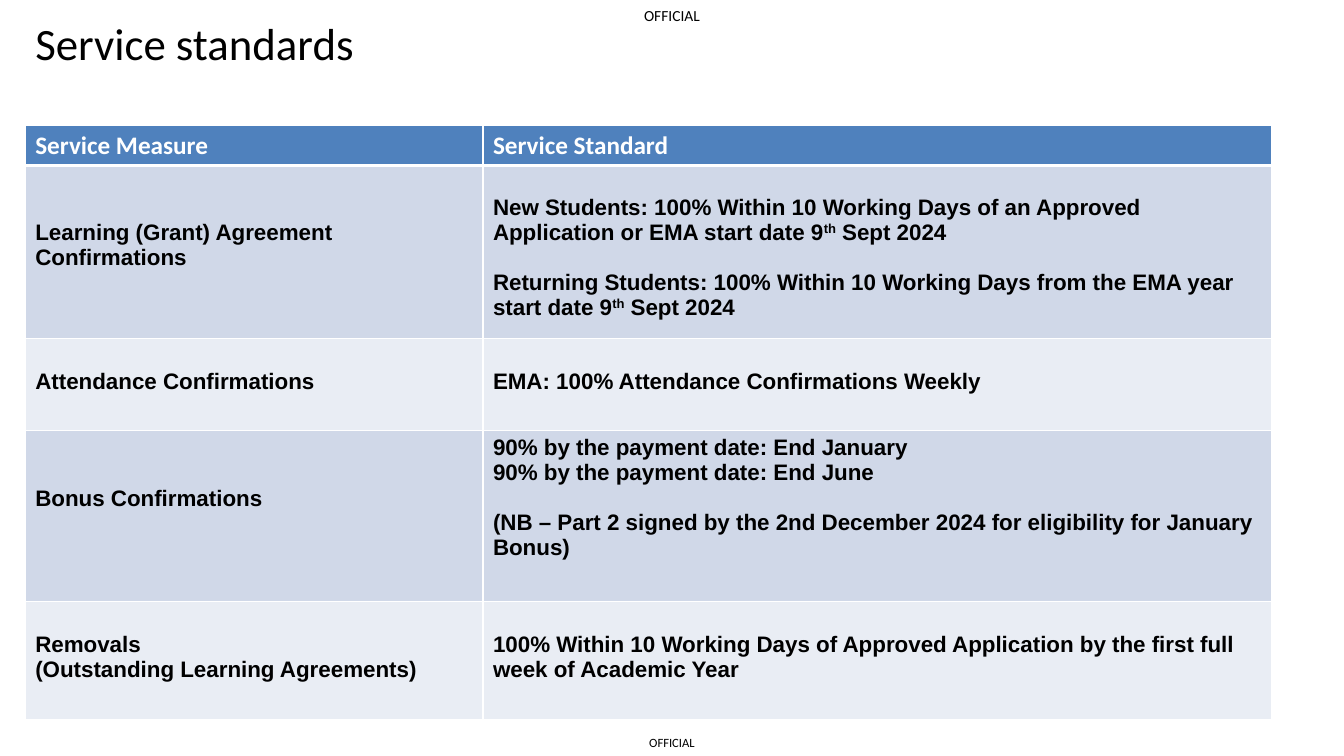
from lxml import etree
from pptx import Presentation
from pptx.dml.color import RGBColor
from pptx.enum.text import MSO_ANCHOR, MSO_AUTO_SIZE, PP_ALIGN
from pptx.oxml.ns import qn
from pptx.util import Inches, Pt

LEFT, CENTER = PP_ALIGN.LEFT, PP_ALIGN.CENTER
TOP, MIDDLE = MSO_ANCHOR.TOP, MSO_ANCHOR.MIDDLE
FIXED = MSO_AUTO_SIZE.NONE
COLORS = {"text": "000000", "head": "4F81BD", "white": "FFFFFF",
          "dark": "D0D8E8", "light": "E9EDF4"}
HEAD = {"name": "Calibri", "size": Pt(18), "bold": True}
BODY = {"name": "Arial", "size": Pt(16), "bold": True}
PAD, LINE, GAP = 0.05, 0.25, Pt(18)
WIDTHS = [4.54, 7.82]
HEIGHTS = [0.39, 1.72, 0.91, 1.7, 1.17]
ROWS = [
    [(0, ["Service Measure"]), (0, ["Service Standard"])],
    [(2, ["Learning (Grant) Agreement Confirmations"]),
     (1, ["New Students: 100% Within 10 Working Days of an Approved "
          "Application or EMA start date 9^th^ Sept 2024",
          "+Returning Students: 100% Within 10 Working Days from the EMA "
          "year start date 9^th^ Sept 2024"])],
    [(1, ["Attendance Confirmations"]),
     (1, ["EMA: 100% Attendance Confirmations Weekly"])],
    [(2, ["Bonus Confirmations"]),
     (0, ["90% by the payment date: End January",
          "90% by the payment date: End June",
          "+(NB – Part 2 signed by the 2nd December 2024 for eligibility "
          "for January Bonus)"])],
    [(1, ["Removals", "(Outstanding Learning Agreements)"]),
     (1, ["100% Within 10 Working Days of Approved Application by the "
          "first full week of Academic Year"])],
]


def style(font, look, color):
    """Apply a dict of format values and a colour to a font."""
    for key, value in look.items():
        setattr(font, key, value)
    font.color.rgb = RGBColor.from_string(COLORS[color])


def write(frame, lines, look, color, align=LEFT):
    """Fill a frame; + opens a gap above a line, ^ wraps superscript."""
    for i, line in enumerate(lines):
        para = frame.paragraphs[0] if i == 0 else frame.add_paragraph()
        para.alignment = align
        if line.startswith("+"):
            para.space_before = GAP
        for j, part in enumerate(line.lstrip("+").split("^")):
            run = para.add_run()
            run.text = part
            style(run.font, look, color)
            if j % 2:
                run.font._element.set("baseline", "30000")


def edge(cell, row):
    """Draw white cell borders, thick between header and body."""
    props = cell._tc.get_or_add_tcPr()
    thick = {"T": row == 1, "B": row == 0}
    for i, side in enumerate("LRTB"):
        line = etree.Element(qn(f"a:ln{side}"))
        line.set("w", str(Pt(3 if thick.get(side) else 1)))
        fill = etree.SubElement(line, qn("a:solidFill"))
        etree.SubElement(fill, qn("a:srgbClr")).set("val", COLORS["white"])
        props.insert(i, line)


def add_grid(slide):
    """Add the table of service measures and standards."""
    table = slide.shapes.add_table(
        len(ROWS), len(WIDTHS), Inches(0.25), Inches(1.24),
        Inches(sum(WIDTHS)), Inches(sum(HEIGHTS))).table
    for col, width in zip(table.columns, WIDTHS):
        col.width = Inches(width)
    for r, (row, height) in enumerate(zip(ROWS, HEIGHTS)):
        table.rows[r].height = Inches(height)
        look, color = (BODY, "text") if r else (HEAD, "white")
        band = ("dark" if r % 2 else "light") if r else "head"
        for c, (skip, lines) in enumerate(row):
            cell = table.cell(r, c)
            cell.margin_top = Inches(PAD + skip * LINE)
            cell.fill.solid()
            cell.fill.fore_color.rgb = RGBColor.from_string(COLORS[band])
            edge(cell, r)
            write(cell.text_frame, lines, look, color)


def add_title(slide):
    """Place and format the title."""
    title = slide.shapes.title
    title.left, title.top = Inches(0.25), Inches(0.11)
    title.width, title.height = Inches(3.53), Inches(0.64)
    frame = title.text_frame
    frame.auto_size, frame.vertical_anchor = FIXED, TOP
    frame.word_wrap = False
    write(frame, ["Service standards"],
          {"name": "Calibri", "size": Pt(32)}, "text")


def add_mark(slide, box, size):
    """Add a centred security marking."""
    frame = slide.shapes.add_textbox(*map(Inches, box)).text_frame
    values = {"margin_left": 0, "margin_right": 0, "margin_top": 0,
              "margin_bottom": 0, "vertical_anchor": MIDDLE,
              "word_wrap": True}
    for key, value in values.items():
        setattr(frame, key, value)
    write(frame, ["OFFICIAL"], {"name": "Calibri", "size": Pt(size)},
          "text", CENTER)


def main():
    """Build and save the slide."""
    deck = Presentation()
    deck.slide_width, deck.slide_height = Inches(13.33), Inches(7.5)
    slide = deck.slides.add_slide(deck.slide_layouts[5])
    add_mark(slide, (6.3, 7.23, 0.73, 0.27), 9)
    add_mark(slide, (6.23, 0, 0.87, 0.31), 11)
    add_grid(slide)
    add_title(slide)
    deck.save("out.pptx")


if __name__ == "__main__":
    main()
